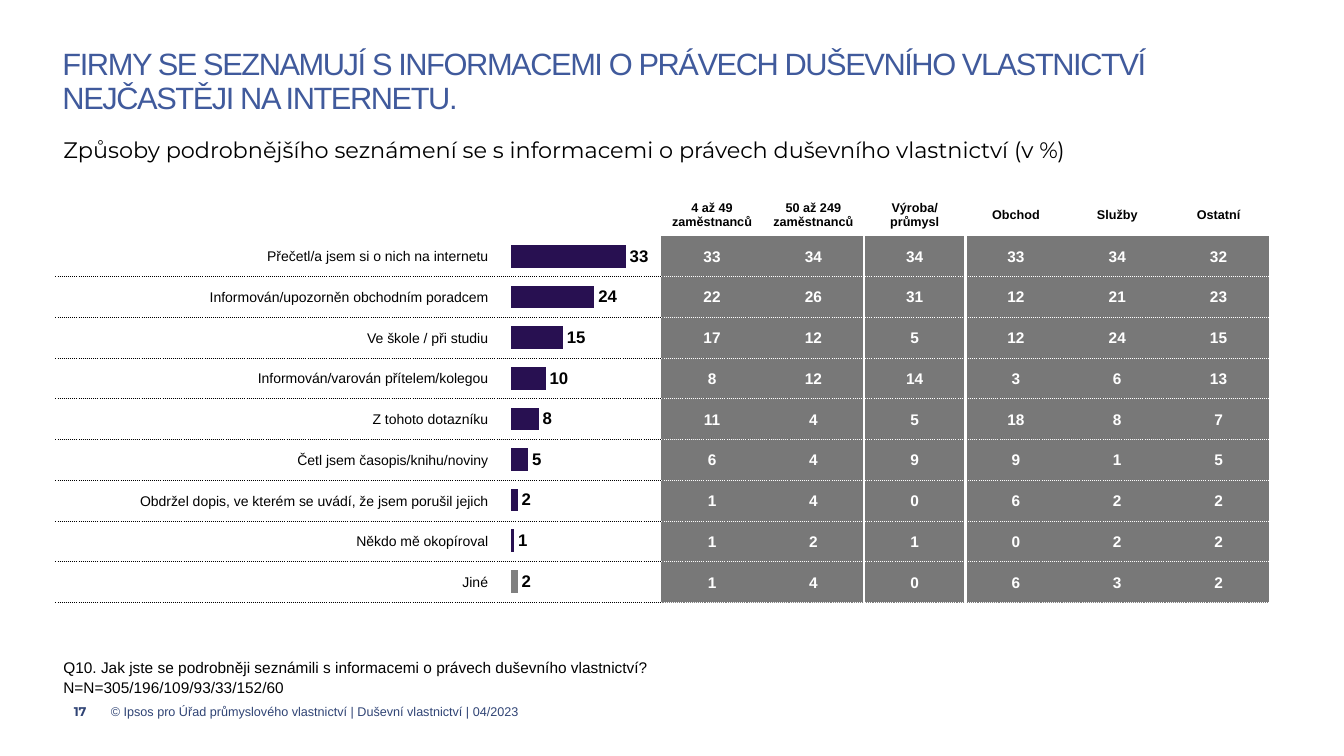
from lxml import etree
from pptx import Presentation
from pptx.chart.data import CategoryChartData
from pptx.dml.color import RGBColor
from pptx.enum.chart import XL_CHART_TYPE as ChartType, XL_LABEL_POSITION as LabelPosition
from pptx.enum.text import MSO_ANCHOR as Anchor, PP_ALIGN as Align
from pptx.oxml import parse_xml
from pptx.oxml.ns import nsdecls, qn
from pptx.util import Inches, Pt

TITLE = ("FIRMY SE SEZNAMUJÍ S INFORMACEMI O PRÁVECH DUŠEVNÍHO VLASTNICTVÍ "
         "NEJČASTĚJI NA INTERNETU.")
SUBTITLE = ("Způsoby podrobnějšího seznámení se s informacemi o právech "
            "duševního vlastnictví (v %)")
QUESTION = ["Q10. Jak jste se podrobněji seznámili s informacemi o právech duševního vlastnictví?",
            "N=N=305/196/109/93/33/152/60"]
COPYRIGHT = "© Ipsos pro Úřad průmyslového vlastnictví | Duševní vlastnictví | 04/2023"
PAGE = "17"

GROUPS = ["4 až 49 zaměstnanců", "50 až 249 zaměstnanců", "Výroba/\nprůmysl",
          "Obchod", "Služby", "Ostatní"]
# Answer, total, then one value per group
ANSWERS = [
    ("Přečetl/a jsem si o nich na internetu", 33, (33, 34, 34, 33, 34, 32)),
    ("Informován/upozorněn obchodním poradcem", 24, (22, 26, 31, 12, 21, 23)),
    ("Ve škole / při studiu", 15, (17, 12, 5, 12, 24, 15)),
    ("Informován/varován přítelem/kolegou", 10, (8, 12, 14, 3, 6, 13)),
    ("Z tohoto dotazníku", 8, (11, 4, 5, 18, 8, 7)),
    ("Četl jsem časopis/knihu/noviny", 5, (6, 4, 9, 9, 1, 5)),
    ("Obdržel dopis, ve kterém se uvádí, že jsem porušil jejich", 2, (1, 4, 0, 6, 2, 2)),
    ("Někdo mě okopíroval", 1, (1, 2, 1, 0, 2, 2)),
    ("Jiné", 2, (1, 4, 0, 6, 3, 2)),
]

BLACK, WHITE, GRAY = "000000", "FFFFFF", "787878"
PURPLE, OTHER_GRAY = "281051", "808080"
BLUE, NAVY = "405A9C", "304475"

TABLE_BOX = (0.55, 1.92, 12.04, 4.06)
CHART_BOX = (4.63, 1.84, 3.72, 4.13)
LABEL_WIDTH, BAR_WIDTH, HEADER_HEIGHT = 4.3, 1.71, 0.42
FIRST_GROUP = 2
SIZE_GROUPS_END = 3
NO_STYLE = "{2D5ABB26-0587-4C30-8999-92F81FD0307C}"
PLOT_AREA = {"x": 0.117, "y": 0.122, "w": 0.883, "h": 0.878}


def color(value):
    return RGBColor.from_string(value)


def set_all(target, values):
    for name, value in values.items():
        setattr(target, name, value)


def style_font(font, size, fill, bold=False, name="Arial"):
    set_all(font, {"size": Pt(size), "bold": bold, "name": name})
    font.color.rgb = color(fill)


def add_text(slide, box, lines, font, frame_format=None, paragraph_format=None, spacing=None):
    """Add a text box; spacing is the tracking in hundredths of a point."""
    frame = slide.shapes.add_textbox(*map(Inches, box)).text_frame
    frame.word_wrap = True
    set_all(frame, frame_format or {})
    for index, line in enumerate(lines):
        paragraph = frame.add_paragraph() if index else frame.paragraphs[0]
        set_all(paragraph, paragraph_format or {})
        run = paragraph.add_run()
        run.text = line
        style_font(run.font, **font)
        if spacing:
            run.font._element.set("spc", str(spacing))


def add_borders(cell, borders):
    """Draw borders given as {side: (colour, points, dash)}; sides are L, R, T, B."""
    properties = cell._tc.get_or_add_tcPr()
    sides = [side for side in "LRTB" if side in borders]
    for index, side in enumerate(sides):
        fill, width, dash = borders[side]
        properties.insert(index, parse_xml(
            f'<a:ln{side} {nsdecls("a")} w="{Pt(width)}"><a:solidFill><a:srgbClr val="{fill}"/>'
            f'</a:solidFill><a:prstDash val="{dash}"/></a:ln{side}>'))


def fill_cell(cell, text, align, font, fill, borders):
    set_all(cell, {"vertical_anchor": Anchor.MIDDLE, "margin_left": Inches(0.01),
                   "margin_right": Inches(0.01), "margin_top": Inches(0.01),
                   "margin_bottom": 0})
    paragraph = cell.text_frame.paragraphs[0]
    paragraph.text = str(text)
    paragraph.alignment = align
    for run in paragraph.runs:
        style_font(run.font, **font)
    if fill:
        cell.fill.solid()
        cell.fill.fore_color.rgb = color(fill)
    else:
        cell.fill.background()
    add_borders(cell, borders)


def cell_borders(row, column):
    dots = (BLACK if column < FIRST_GROUP else WHITE, 1, "sysDot")
    borders = {}
    if row:
        borders["B"] = dots
    if row > 1:
        borders["T"] = dots
    if column == SIZE_GROUPS_END:
        borders["R"] = (WHITE, 2.25, "solid")
    if column == SIZE_GROUPS_END + 1:
        borders["L"] = (WHITE, 2.25, "solid")
    return borders


def add_answer_table(slide):
    rows = [["", "", *GROUPS]] + [[label, "", *values] for label, _, values in ANSWERS]
    frame = slide.shapes.add_table(len(rows), len(rows[0]), *map(Inches, TABLE_BOX))
    table = frame.table
    set_all(table, {"first_row": False, "horz_banding": False})
    table._tbl.tblPr.find(qn("a:tableStyleId")).text = NO_STYLE

    _, _, width, height = TABLE_BOX
    group_width = (width - LABEL_WIDTH - BAR_WIDTH) / len(GROUPS)
    for column, size in zip(table.columns, [LABEL_WIDTH, BAR_WIDTH] + [group_width] * len(GROUPS)):
        column.width = Inches(size)
    answer_height = (height - HEADER_HEIGHT) / len(ANSWERS)
    for row, size in zip(table.rows, [HEADER_HEIGHT] + [answer_height] * len(ANSWERS)):
        row.height = Inches(size)

    header_font = {"size": 9, "fill": BLACK, "bold": True}
    label_font = {"size": 10, "fill": BLACK}
    value_font = {"size": 11, "fill": WHITE, "bold": True}
    for row, texts in enumerate(rows):
        for column, text in enumerate(texts):
            if column < FIRST_GROUP:
                align, font, fill = Align.RIGHT, label_font, None
            elif row == 0:
                align, font, fill = Align.CENTER, header_font, WHITE
            else:
                align, font, fill = Align.CENTER, value_font, GRAY
            fill_cell(table.cell(row, column), text, align, font, fill, cell_borders(row, column))


def place_plot_area(chart):
    plot_area = chart._chartSpace.chart.plotArea
    for old in plot_area.findall(qn("c:layout")):
        plot_area.remove(old)
    layout = etree.Element(qn("c:layout"))
    manual = etree.SubElement(layout, qn("c:manualLayout"))
    values = {"layoutTarget": "inner", "xMode": "edge", "yMode": "edge", **PLOT_AREA}
    for name, value in values.items():
        etree.SubElement(manual, qn(f"c:{name}")).set("val", str(value))
    plot_area.insert(0, layout)


def add_total_chart(slide):
    data = CategoryChartData()
    data.categories = [str(number) for number in range(1, len(ANSWERS) + 1)]
    data.add_series("Series 1", [total for _, total, _ in ANSWERS])
    chart = slide.shapes.add_chart(ChartType.BAR_CLUSTERED, *map(Inches, CHART_BOX), data).chart
    set_all(chart, {"has_legend": False, "has_title": False})
    style_font(chart.font, 11, BLACK)
    set_all(chart.category_axis, {"visible": False, "reverse_order": True})
    set_all(chart.value_axis, {"visible": False, "minimum_scale": 0, "maximum_scale": 95,
                               "major_unit": 20, "has_major_gridlines": False})
    plot = chart.plots[0]
    set_all(plot, {"gap_width": 80, "vary_by_categories": False, "has_data_labels": True})
    set_all(plot.data_labels, {"show_value": True, "number_format": "#,##0",
                               "number_format_is_linked": False,
                               "position": LabelPosition.OUTSIDE_END})
    style_font(plot.data_labels.font, 12, BLACK, bold=True)
    series = plot.series[0]
    last_bar = series.points[len(ANSWERS) - 1]
    for part, fill in ((series, PURPLE), (last_bar, OTHER_GRAY)):
        part.format.fill.solid()
        part.format.fill.fore_color.rgb = color(fill)
    place_plot_area(chart)


def main():
    presentation = Presentation()
    set_all(presentation, {"slide_width": Inches(13.33), "slide_height": Inches(7.5)})
    slide = presentation.slides.add_slide(presentation.slide_layouts[6])
    add_answer_table(slide)
    add_total_chart(slide)

    no_margins = dict.fromkeys(("margin_left", "margin_right", "margin_top", "margin_bottom"), 0)
    footer = {"margin_left": 0, "margin_right": 0, "vertical_anchor": Anchor.MIDDLE}
    add_text(slide, (0.44, 0.44, 12.26, 0.77), [TITLE], {"size": 22, "fill": BLUE},
             {"margin_left": Inches(0.18), "margin_right": Inches(0.18)},
             {"line_spacing": 0.9}, spacing=-100)
    add_text(slide, (0.6, 6.86, 0.39, 0.4), [PAGE],
             {"size": 9, "fill": NAVY, "bold": True, "name": "Montserrat"},
             footer, {"alignment": Align.CENTER})
    add_text(slide, (0.63, 1.42, 11.44, 0.21), [SUBTITLE],
             {"size": 16, "fill": BLACK, "name": "Montserrat"},
             no_margins, {"line_spacing": Pt(14)})
    add_text(slide, (0.53, 6.47, 11.36, 0.68), QUESTION, {"size": 11, "fill": BLACK},
             paragraph_format={"line_spacing": Pt(14)})
    add_text(slide, (1.1, 6.86, 10.07, 0.4), [COPYRIGHT], {"size": 9, "fill": NAVY}, footer)
    presentation.save("out.pptx")


if __name__ == "__main__":
    main()
